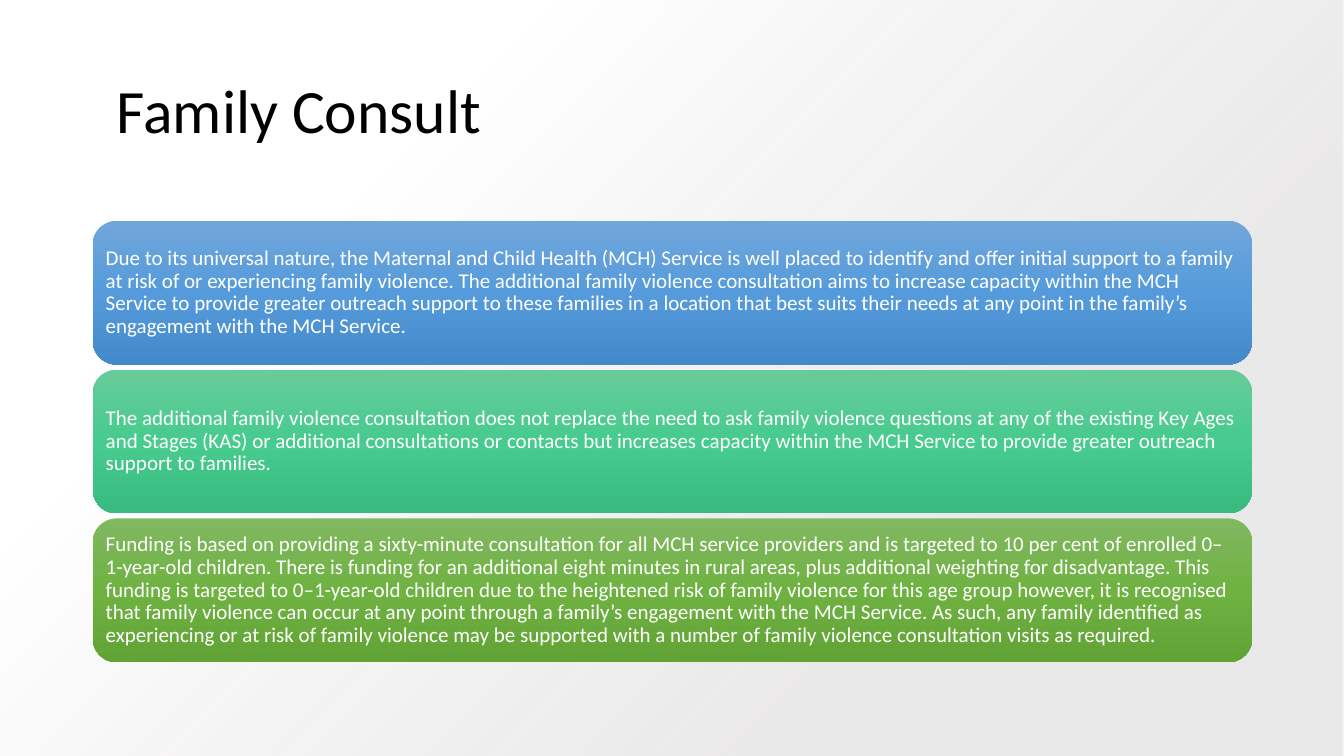
import pptx
import pptx.dml.color
import pptx.enum.shapes
import pptx.enum.text
import pptx.oxml
import pptx.oxml.ns
import pptx.util

Inches = pptx.util.Inches
RGBColor = pptx.dml.color.RGBColor
ShapeType = pptx.enum.shapes.MSO_SHAPE

BLACK = RGBColor(0x00, 0x00, 0x00)
WHITE = RGBColor(0xFF, 0xFF, 0xFF)
GREY = RGBColor(0xE7, 0xE6, 0xE6)
BLUES = [RGBColor(0x71, 0xA6, 0xDB), RGBColor(0x55, 0x9B, 0xDB), RGBColor(0x44, 0x8A, 0xCA)]
TEALS = [RGBColor(0x67, 0xCC, 0x9A), RGBColor(0x47, 0xCB, 0x8E), RGBColor(0x39, 0xBB, 0x7F)]
GREENS = [RGBColor(0x81, 0xB8, 0x61), RGBColor(0x6F, 0xB2, 0x42), RGBColor(0x62, 0xA3, 0x36)]

FONT = "Calibri"
DOWNWARD = '<a:lin ang="5400000" scaled="0"/>'
FROM_CORNER = '<a:path path="circle"><a:fillToRect l="100000" t="100000"/></a:path>'

PANELS = [
    (BLUES, "Due to its universal nature, the Maternal and Child Health (MCH) Service is well "
     "placed to identify and offer initial support to a family at risk of or experiencing family "
     "violence. The additional family violence consultation aims to increase capacity within the "
     "MCH Service to provide greater outreach support to these families in a location that best "
     "suits their needs at any point in the family’s engagement with the MCH Service."),
    (TEALS, "The additional family violence consultation does not replace the need to ask family "
     "violence questions at any of the existing Key Ages and Stages (KAS) or additional "
     "consultations or contacts but increases capacity within the MCH Service to provide greater "
     "outreach support to families."),
    (GREENS, "Funding is based on providing a sixty-minute consultation for all MCH service "
     "providers and is targeted to 10 per cent of enrolled 0–1-year-old children. There is "
     "funding for an additional eight minutes in rural areas, plus additional weighting for "
     "disadvantage. This funding is targeted to 0–1-year-old children due to the heightened risk "
     "of family violence for this age group however, it is recognised that family violence can "
     "occur at any point through a family’s engagement with the MCH Service. As such, any family "
     "identified as experiencing or at risk of family violence may be supported with a number of "
     "family violence consultation visits as required."),
]


def fill_gradient(shape, stops, direction):
    """Fill a shape with (position, colour, opacity) stops, all in percent."""
    shape.fill.gradient()
    gradient = shape._element.spPr.find(pptx.oxml.ns.qn("a:gradFill"))
    stop_xml = "".join(
        f'<a:gs pos="{position * 1000}"><a:srgbClr val="{colour}">'
        f'<a:alpha val="{opacity * 1000}"/></a:srgbClr></a:gs>'
        for position, colour, opacity in stops)
    replacement = pptx.oxml.parse_xml(
        f'<a:gradFill {pptx.oxml.ns.nsdecls("a")} rotWithShape="1">'
        f'<a:gsLst>{stop_xml}</a:gsLst>{direction}</a:gradFill>')
    gradient.getparent().replace(gradient, replacement)


def add_plain_shape(slide, kind, left, top, width, height):
    """Add a preset shape without outline or shadow."""
    shape = slide.shapes.add_shape(kind, left, top, width, height)
    shape.shadow.inherit = False
    shape.line.fill.background()
    return shape


def format_text(text_frame, size, colour):
    """Set left-aligned, vertically centred text with tight lines."""
    text_frame.word_wrap = True
    text_frame.auto_size = pptx.enum.text.MSO_AUTO_SIZE.NONE
    text_frame.vertical_anchor = pptx.enum.text.MSO_ANCHOR.MIDDLE
    for paragraph in text_frame.paragraphs:
        paragraph.alignment = pptx.enum.text.PP_ALIGN.LEFT
        paragraph.line_spacing = 0.9
        for run in paragraph.runs:
            run.font.name = FONT
            run.font.size = pptx.util.Pt(size)
            run.font.color.rgb = colour


def add_backdrop(slide, width, height):
    """Lay a pale corner gradient behind everything else."""
    backdrop = add_plain_shape(slide, ShapeType.RECTANGLE, 0, 0, width, height)
    fill_gradient(backdrop, [(28, GREY, 84), (74, WHITE, 100)], FROM_CORNER)
    slide.shapes._spTree.insert(2, backdrop._element)


def place_title(slide, left, top, width, height):
    """Move and format the title placeholder."""
    title = slide.shapes.title
    title.left, title.top, title.width, title.height = left, top, width, height
    title.text_frame.text = " Family Consult"
    format_text(title.text_frame, 44, BLACK)


def add_panels(slide, left, top, width, height, gap):
    """Stack the text panels evenly in the given box."""
    panel_height = (height - gap * (len(PANELS) - 1)) // len(PANELS)
    for index, (colours, text) in enumerate(PANELS):
        panel = add_plain_shape(slide, ShapeType.ROUNDED_RECTANGLE, left,
                                top + index * (panel_height + gap), width, panel_height)
        stops = [(position, colour, 100) for position, colour in zip((0, 50, 100), colours)]
        fill_gradient(panel, stops, DOWNWARD)
        text_frame = panel.text_frame
        text_frame.margin_left = text_frame.margin_right = Inches(0.06)
        text_frame.margin_top = text_frame.margin_bottom = Inches(0.06)
        text_frame.text = text
        format_text(text_frame, 15, WHITE)


def main():
    """Build and save the slide."""
    presentation = pptx.Presentation()
    presentation.slide_width = Inches(13.33)
    presentation.slide_height = Inches(7.5)
    slide = presentation.slides.add_slide(presentation.slide_layouts[5])
    add_backdrop(slide, presentation.slide_width, presentation.slide_height)
    left, width = Inches(0.92), Inches(11.5)
    place_title(slide, left, Inches(0.4), width, Inches(1.45))
    add_panels(slide, left, Inches(2.19), width, Inches(4.38), Inches(0.05))
    presentation.save("out.pptx")


if __name__ == "__main__":
    main()
